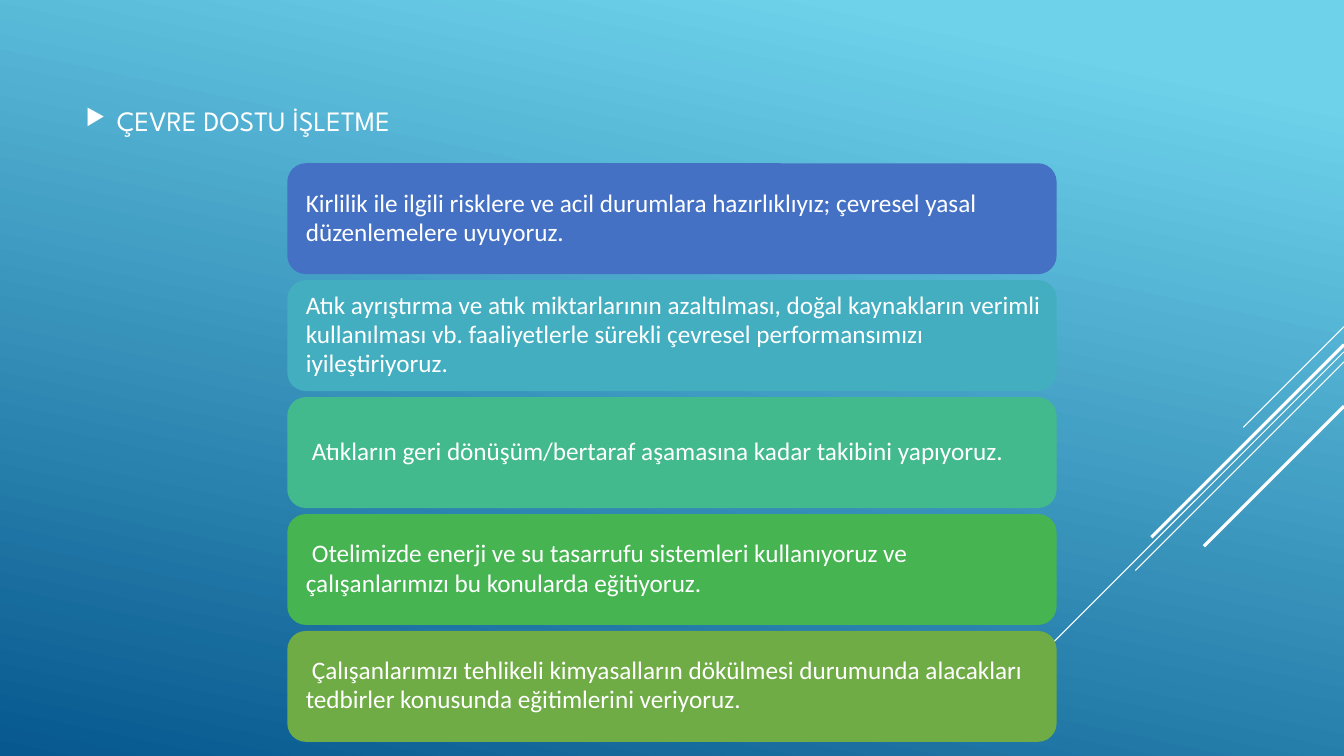
from lxml.etree import SubElement
from pptx import Presentation
from pptx.dml.color import RGBColor
from pptx.enum.shapes import MSO_CONNECTOR, MSO_SHAPE
from pptx.enum.text import MSO_ANCHOR, PP_ALIGN
from pptx.oxml.ns import qn
from pptx.util import Inches, Pt

WIDTH, HEIGHT = 13.33, 7.5
WHITE = "FFFFFF"
GRADIENT = [(0.1, "6ED2EB"), (1, "06588E")]
TITLE = "ÇEVRE DOSTU İŞLETME"

# text, fill, first-line indent
COMMITMENTS = [
    ("Kirlilik ile ilgili risklere ve acil durumlara hazırlıklıyız; çevresel yasal\v"
     "düzenlemelere uyuyoruz.", "4471C4", 0),
    ("Atık ayrıştırma ve atık miktarlarının azaltılması, doğal kaynakların verimli\v"
     "kullanılması vb. faaliyetlerle sürekli çevresel performansımızı\v"
     "iyileştiriyoruz.", "43AEC0", 0),
    ("Atıkların geri dönüşüm/bertaraf aşamasına kadar takibini yapıyoruz.", "43BA8D", 0.06),
    ("Otelimizde enerji ve su tasarrufu sistemleri kullanıyoruz ve\v"
     "çalışanlarımızı bu konularda eğitiyoruz.", "45B451", 0.06),
    ("Çalışanlarımızı tehlikeli kimyasalların dökülmesi durumunda alacakları\v"
     "tedbirler konusunda eğitimlerini veriyoruz.", "6FAC46", 0.06),
]
BOX_LEFT, BOX_TOP, BOX_WIDTH, BOX_HEIGHT, PITCH = 2.85, 1.62, 7.63, 1.1, 1.16

# diagonals from the right edge: start height, horizontal reach, line width
DIAGONALS = [(3.24, 1, 0.75), (3.49, 3.26, 0.75), (3.59, 2.07, 0.75),
             (3.42, 1.91, 2.25), (4.03, 1.39, 2.25)]


def rgb(color):
    return RGBColor.from_string(color)


def write(tf, text, size, font, color=WHITE, spacing=None, indent=0, hanging=0):
    tf.word_wrap = True
    tf.vertical_anchor = MSO_ANCHOR.MIDDLE
    p = tf.paragraphs[0]
    p.text = text
    p.alignment = PP_ALIGN.LEFT
    p.line_spacing = spacing
    pPr = p._p.get_or_add_pPr()
    pPr.set("marL", str(Inches(hanging)))
    pPr.set("indent", str(Inches(indent - hanging)))
    for r in p.runs:
        r.font.size, r.font.name = Pt(size), font
        r.font.bold = False
        r.font.color.rgb = rgb(color)
    return p


def add_bullet(p, char, color, percent):
    pPr = p._p.get_or_add_pPr()
    SubElement(SubElement(pPr, qn("a:buClr")), qn("a:srgbClr"), val=color)
    SubElement(pPr, qn("a:buSzPct"), val=str(percent * 1000))
    SubElement(pPr, qn("a:buChar"), char=char)


def add_diagonal(s, top, reach, width):
    line = s.shapes.add_connector(
        MSO_CONNECTOR.STRAIGHT, Inches(WIDTH), Inches(top),
        Inches(WIDTH - reach), Inches(top + reach))
    line.line.color.rgb = rgb(WHITE)
    line.line.width = Pt(width)
    SubElement(line._element.spPr, qn("a:effectLst"))


def add_box(s, row, text, fill, indent):
    box = s.shapes.add_shape(
        MSO_SHAPE.ROUNDED_RECTANGLE, Inches(BOX_LEFT), Inches(BOX_TOP + row * PITCH),
        Inches(BOX_WIDTH), Inches(BOX_HEIGHT))
    box.adjustments[0] = 0.167
    box.shadow.inherit = False
    box.fill.solid()
    box.fill.fore_color.rgb = rgb(fill)
    box.line.fill.background()
    tf = box.text_frame
    tf.margin_left, tf.margin_right = Inches(0.13), Inches(0.05)
    tf.margin_top, tf.margin_bottom = 0, Inches(0.03)
    write(tf, text, 18, "Calibri", spacing=Pt(20.8), indent=indent)


def main():
    prs = Presentation()
    prs.slide_width, prs.slide_height = Inches(WIDTH), Inches(HEIGHT)
    s = prs.slides.add_slide(prs.slide_layouts[5])

    bg = s.background.fill
    bg.gradient()
    bg.gradient_angle = 258
    for stop, (position, color) in zip(bg.gradient_stops, GRADIENT):
        stop.position = position
        stop.color.rgb = rgb(color)

    for diagonal in DIAGONALS:
        add_diagonal(s, *diagonal)

    title = s.shapes.title
    title.left, title.top = Inches(0.75), Inches(0.75)
    title.width, title.height = Inches(9.33), Inches(0.88)
    p = write(title.text_frame, TITLE, 20, "League Spartan", hanging=0.31)
    add_bullet(p, "▶", WHITE, 80)

    for row, commitment in enumerate(COMMITMENTS):
        add_box(s, row, *commitment)

    prs.save("out.pptx")


if __name__ == "__main__":
    main()
